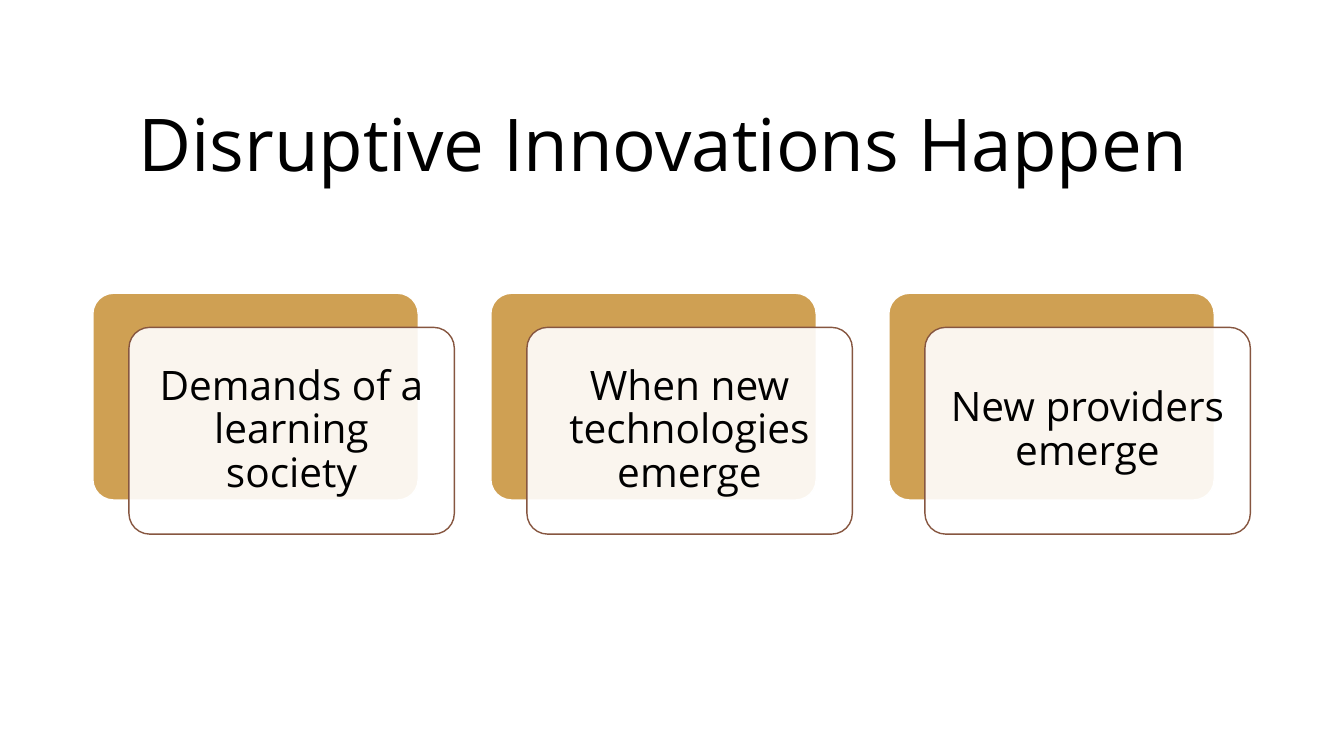
"""Build the slide "Disruptive Innovations Happen" with three layered cards."""
import pptx
import pptx.util
import pptx.dml.color
import pptx.enum.shapes
import pptx.enum.text
import pptx.oxml.ns
import lxml.etree

Cm, Pt = pptx.util.Cm, pptx.util.Pt
RGBColor = pptx.dml.color.RGBColor
BLACK = RGBColor(0x00, 0x00, 0x00)
WHITE = RGBColor(0xFF, 0xFF, 0xFF)
GOLD = RGBColor(0xCF, 0xA0, 0x53)
BROWN = RGBColor(0x86, 0x56, 0x40)

CARD_W, CARD_H = 8.2, 5.21
LEFT, TOP, STEP = 2.34, 7.39, 10.03
SHIFT_X, SHIFT_Y = 0.91, 0.86
CAUSES = [
    "Demands of a learning society",
    "When new technologies emerge",
    "New providers emerge",
]


def add_card(s, x, y, fill, line):
    sp = s.shapes.add_shape(
        pptx.enum.shapes.MSO_SHAPE.ROUNDED_RECTANGLE,
        Cm(x), Cm(y), Cm(CARD_W), Cm(CARD_H))
    sp.adjustments[0] = 0.1
    sp.shadow.inherit = False
    sp.fill.solid()
    sp.fill.fore_color.rgb = fill
    sp.line.color.rgb = line
    sp.line.width = Pt(1)
    return sp


def write_text(sp, text, size, inset_x, inset_y):
    tf = sp.text_frame
    frame_format = {
        "word_wrap": True,
        "auto_size": pptx.enum.text.MSO_AUTO_SIZE.NONE,
        "vertical_anchor": pptx.enum.text.MSO_ANCHOR.MIDDLE,
        "margin_left": Cm(inset_x), "margin_right": Cm(inset_x),
        "margin_top": Cm(inset_y), "margin_bottom": Cm(inset_y),
    }
    for name, value in frame_format.items():
        setattr(tf, name, value)
    p = tf.paragraphs[0]
    p.alignment = pptx.enum.text.PP_ALIGN.CENTER
    p.line_spacing = 0.9
    r = p.add_run()
    r.text = text
    for name, value in {"name": "Open Sans", "size": Pt(size)}.items():
        setattr(r.font, name, value)
    r.font.color.rgb = BLACK


prs = pptx.Presentation()
prs.slide_width, prs.slide_height = Cm(33.87), Cm(19.05)
s = prs.slides.add_slide(prs.slide_layouts.get_by_name("Title Only"))

title = s.shapes.title
title_box = {"left": 2.34, "top": 1.88, "width": 29.21, "height": 3.68}
for name, value in title_box.items():
    setattr(title, name, Cm(value))
write_text(title, "Disruptive Innovations Happen ", 52, 0.25, 0.13)

for i, cause in enumerate(CAUSES):
    x = LEFT + i * STEP
    add_card(s, x, TOP, GOLD, WHITE)
    front = add_card(s, x + SHIFT_X, TOP + SHIFT_Y, WHITE, BROWN)
    color = front.fill._xPr.find(".//" + pptx.oxml.ns.qn("a:srgbClr"))
    lxml.etree.SubElement(color, pptx.oxml.ns.qn("a:alpha"), val="90000")
    write_text(front, cause, 29, 0.3, 0.3)

prs.save("out.pptx")
